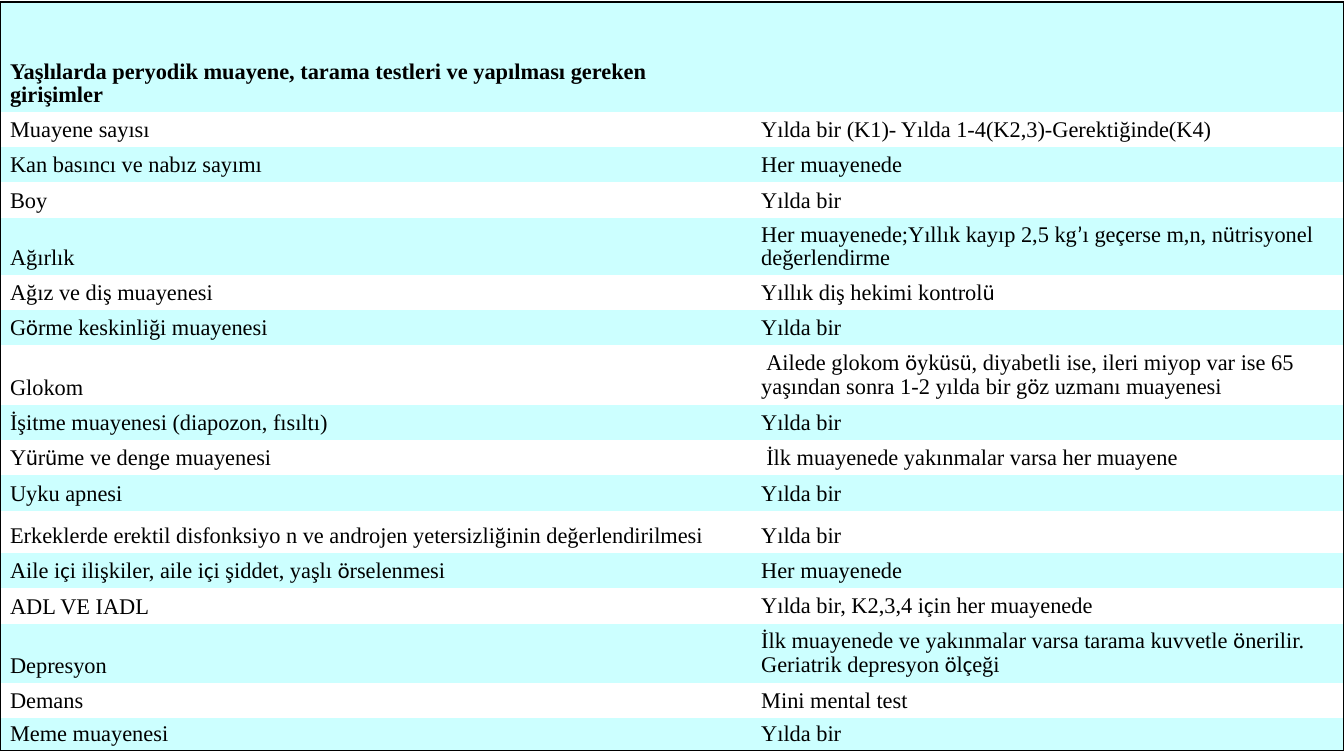
from dataclasses import dataclass
from itertools import groupby

from lxml import etree
from pptx import Presentation
from pptx import util as u
from pptx.dml.color import RGBColor
from pptx.enum import text
from pptx.oxml import ns

NBSP = chr(160)
NO_GRID = "{2D5ABB26-0587-4C30-8999-92F81FD0307C}"


@dataclass(frozen=True)
class Theme:
    ink: str = "000000"
    band: str = "CCFFFF"
    size: int = 16
    rule: int = 1
    lead: float = 0.9
    font: str = "Times New Roman"
    alt: str = "Calibri"
    alt_set: str = "öüç’" + NBSP  # letters set in the second font


@dataclass(frozen=True)
class Row:
    exam: str
    when: str
    height: float = 0.35


LOOK = Theme()
COLS = (7.45, 5.88)
ROWS = [
    Row("Yaşlılarda peryodik muayene, tarama testleri ve yapılması gereken girişimler", "", 1.09),
    Row("Muayene sayısı", "Yılda bir (K1)- Yılda 1-4(K2,3)-Gerektiğinde(K4)"),
    Row("Kan basıncı ve nabız sayımı", "Her muayenede"),
    Row("Boy", "Yılda bir"),
    Row("Ağırlık", "Her muayenede;Yıllık kayıp 2,5 kg’ı geçerse m,n, nütrisyonel değerlendirme", 0.52),
    Row("Ağız ve diş muayenesi", "Yıllık diş hekimi kontrolü"),
    Row("Görme keskinliği muayenesi", "Yılda bir"),
    Row("Glokom", NBSP + "Ailede glokom öyküsü, diyabetli ise, ileri miyop var ise 65 "
        "yaşından sonra 1-2 yılda bir göz uzmanı muayenesi", 0.56),
    Row("İşitme muayenesi (diapozon, fısıltı)", "Yılda bir"),
    Row("Yürüme ve denge muayenesi", NBSP + "İlk muayenede yakınmalar varsa her muayene"),
    Row("Uyku apnesi", "Yılda bir"),
    Row("Erkeklerde erektil disfonksiyo n ve androjen yetersizliğinin değerlendirilmesi",
        "Yılda bir", 0.42),
    Row("Aile içi ilişkiler, aile içi şiddet, yaşlı örselenmesi", "Her muayenede"),
    Row("ADL VE IADL", "Yılda bir, K2,3,4 için her muayenede"),
    Row("Depresyon", "İlk muayenede ve yakınmalar varsa tarama kuvvetle önerilir. "
        "Geriatrik depresyon ölçeği", 0.56),
    Row("Demans", "Mini mental test"),
    Row("Meme muayenesi", "Yılda bir", 0.21),
]


def write(cell, words: str, bold: bool) -> None:
    """Fill a cell, switching font for the letters in the second set."""
    cell.vertical_anchor = text.MSO_ANCHOR.BOTTOM
    para = cell.text_frame.paragraphs[0]
    para.line_spacing = LOOK.lead
    for is_alt, chars in groupby(words, lambda c: c in LOOK.alt_set):
        run = para.add_run()
        run.text = "".join(chars)
        run.font.name = LOOK.alt if is_alt else LOOK.font
        run.font.size = u.Pt(LOOK.size)
        run.font.bold = bold
        run.font.color.rgb = RGBColor.from_string(LOOK.ink)


def edge(cell, side: str) -> None:
    """Draw one cell border: L, R, T or B."""
    props = cell._tc.get_or_add_tcPr()
    line = etree.SubElement(props, ns.qn(f"a:ln{side}"), w=str(u.Pt(LOOK.rule)))
    fill = etree.SubElement(line, ns.qn("a:solidFill"))
    etree.SubElement(fill, ns.qn("a:srgbClr"), val=LOOK.ink)


def paint(cell, band: bool) -> None:
    if band:
        cell.fill.solid()
        cell.fill.fore_color.rgb = RGBColor.from_string(LOOK.band)
    else:
        cell.fill.background()


def main() -> None:
    deck = Presentation()
    deck.slide_width, deck.slide_height = u.Inches(13.33), u.Inches(7.5)
    slide = deck.slides.add_slide(deck.slide_layouts[6])

    # Plain table without a built-in style
    frame = slide.shapes.add_table(len(ROWS), len(COLS), 0, u.Inches(0.02),
                                   u.Inches(sum(COLS)), u.Inches(7.48))
    table = frame.table
    table.first_row = table.horz_banding = False
    table._tbl.tblPr.find(ns.qn("a:tableStyleId")).text = NO_GRID
    for col, width in zip(table.columns, COLS):
        col.width = u.Inches(width)

    # Rows: banded fill, outer border only
    last = len(ROWS) - 1
    for i, row in enumerate(ROWS):
        table.rows[i].height = u.Inches(row.height)
        for j, words in enumerate((row.exam, row.when)):
            cell = table.cell(i, j)
            write(cell, words, bold=i == 0)
            edge(cell, "LR"[j])
            if i == 0:
                edge(cell, "T")
            if i == last:
                edge(cell, "B")
            paint(cell, band=i % 2 == 0)

    deck.save("out.pptx")


if __name__ == "__main__":
    main()
